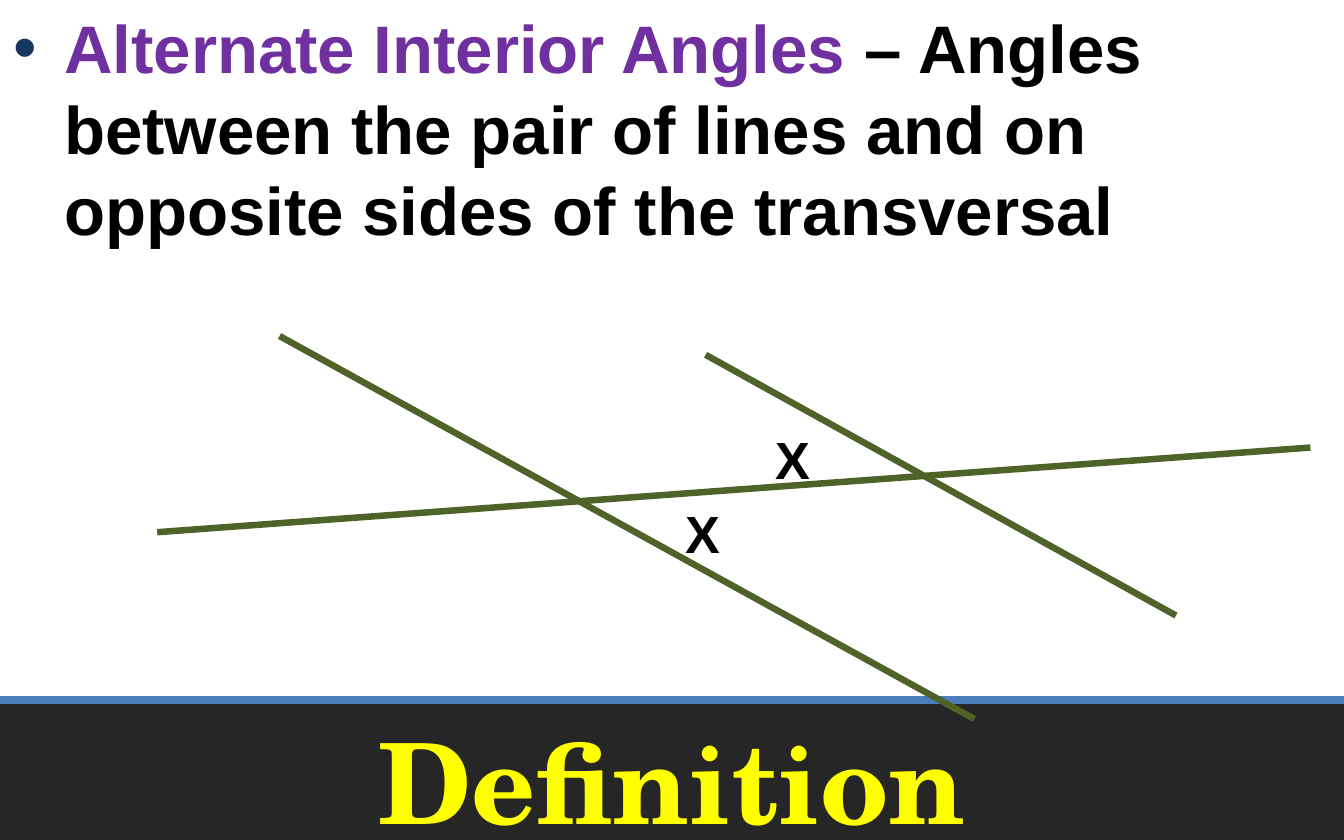
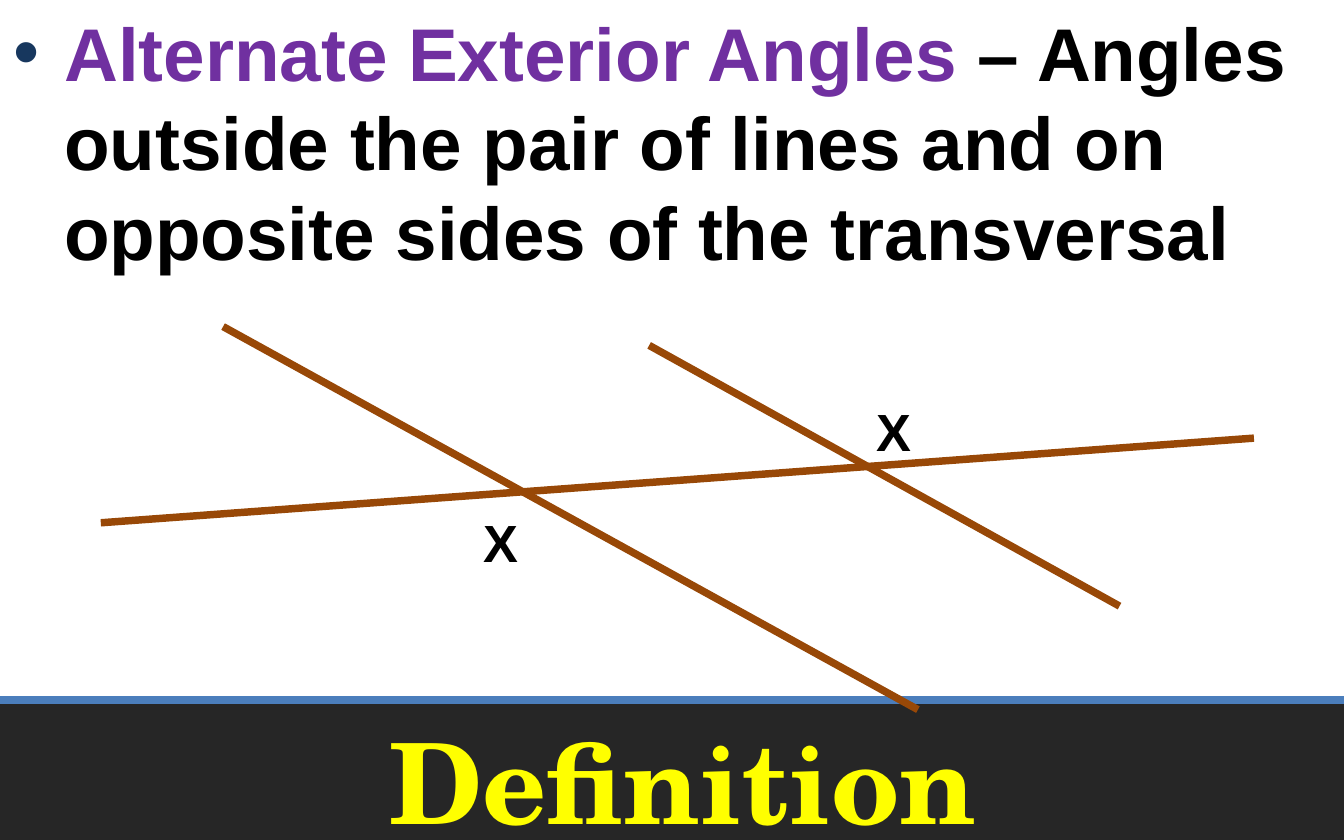
import pptx
import pptx.dml.color
import pptx.enum.shapes
import pptx.enum.text
import pptx.oxml.ns
import pptx.util
import lxml.etree

Inches = pptx.util.Inches
Pt = pptx.util.Pt
RGBColor = pptx.dml.color.RGBColor

BLACK = RGBColor(0x00, 0x00, 0x00)
DARK = RGBColor(0x26, 0x26, 0x26)
BLUE = RGBColor(0x4B, 0x7E, 0xBC)
NAVY = RGBColor(0x17, 0x37, 0x5E)
YELLOW = RGBColor(0xFF, 0xFF, 0x00)
PURPLE = RGBColor(0x70, 0x30, 0xA0)
GREEN = RGBColor(0x4F, 0x62, 0x28)
BROWN = RGBColor(0x98, 0x48, 0x07)

SANS = "Arial"
SERIF = "TeX Gyre Schola"
WIDE, HIGH = 10, 6.25
BAND = 5.21
INDENT = 0.38

SLIDES = [
    {
        "term": "Alternate Interior Angles ",
        "text": "– Angles between the pair of lines and on opposite sides of the transversal",
        "size": 36,
        "title": 0.5,
        "start": (1.17, 3.96),
        "color": GREEN,
        "width": 3.5,
        "marks": [(5, 3.68), (5.67, 3.13)],
    },
    {
        "term": "Alternate Exterior Angles ",
        "text": "– Angles outside the pair of lines and on opposite sides of the transversal",
        "size": 40,
        "title": 0.58,
        "start": (0.75, 3.89),
        "color": BROWN,
        "width": 4,
        "marks": [(3.5, 3.75), (6.42, 2.92)],
    },
]

LINES = [
    (0, 0, 8.58, -0.63),
    (0.91, -1.46, 6.08, 1.39),
    (4.08, -1.32, 7.58, 0.62),
]


def add_line(slide, ends, color, width):
    line = slide.shapes.add_connector(
        pptx.enum.shapes.MSO_CONNECTOR.STRAIGHT, *[Inches(end) for end in ends])
    line.line.color.rgb = color
    line.line.width = Pt(width)
    lxml.etree.SubElement(line._element.spPr, pptx.oxml.ns.qn("a:effectLst"))


def add_text(slide, box, runs, size, font):
    frame = slide.shapes.add_textbox(*[Inches(side) for side in box]).text_frame
    frame.word_wrap = True
    para = frame.paragraphs[0]
    for text, color in runs:
        run = para.add_run()
        run.text = text
        run.font.name = font
        run.font.size = Pt(size)
        run.font.bold = True
        run.font.color.rgb = color
    return frame


def add_bullet(para):
    props = para._p.get_or_add_pPr()
    props.set("marL", str(Inches(INDENT)))
    props.set("indent", str(-Inches(INDENT)))
    qn = pptx.oxml.ns.qn
    tint = lxml.etree.SubElement(props, qn("a:buClr"))
    lxml.etree.SubElement(tint, qn("a:srgbClr")).set("val", str(NAVY))
    lxml.etree.SubElement(props, qn("a:buFont")).set("typeface", SANS)
    lxml.etree.SubElement(props, qn("a:buChar")).set("char", "•")


def add_frame(slide, left):
    band = slide.shapes.add_shape(
        pptx.enum.shapes.MSO_SHAPE.RECTANGLE,
        0, Inches(BAND), Inches(WIDE), Inches(HIGH - BAND))
    band.shadow.inherit = False
    band.fill.solid()
    band.fill.fore_color.rgb = DARK
    band.line.fill.background()
    add_line(slide, (0, BAND, WIDE, BAND), BLUE, 4)
    title = add_text(slide, (left, 5.35, 9, 0.9), [("Definition", YELLOW)], 60, SERIF)
    title.vertical_anchor = pptx.enum.text.MSO_ANCHOR.MIDDLE
    title.paragraphs[0].alignment = pptx.enum.text.PP_ALIGN.CENTER


def add_slide(deck, item):
    slide = deck.slides.add_slide(deck.slide_layouts[6])
    add_frame(slide, item["title"])
    runs = [(item["term"], PURPLE), (item["text"], BLACK)]
    body = add_text(slide, (0, 0, WIDE, 5.35), runs, item["size"], SANS)
    add_bullet(body.paragraphs[0])
    x, y = item["start"]
    for x1, y1, x2, y2 in LINES:
        add_line(slide, (x + x1, y + y1, x + x2, y + y2), item["color"], item["width"])
    for left, top in item["marks"]:
        add_text(slide, (left, top, 0.42, 0.57), [("X", BLACK)], 28, SANS)


def main():
    deck = pptx.Presentation()
    deck.slide_width = Inches(WIDE)
    deck.slide_height = Inches(HIGH)
    for item in SLIDES:
        add_slide(deck, item)
    deck.save("out.pptx")


if __name__ == "__main__":
    main()
